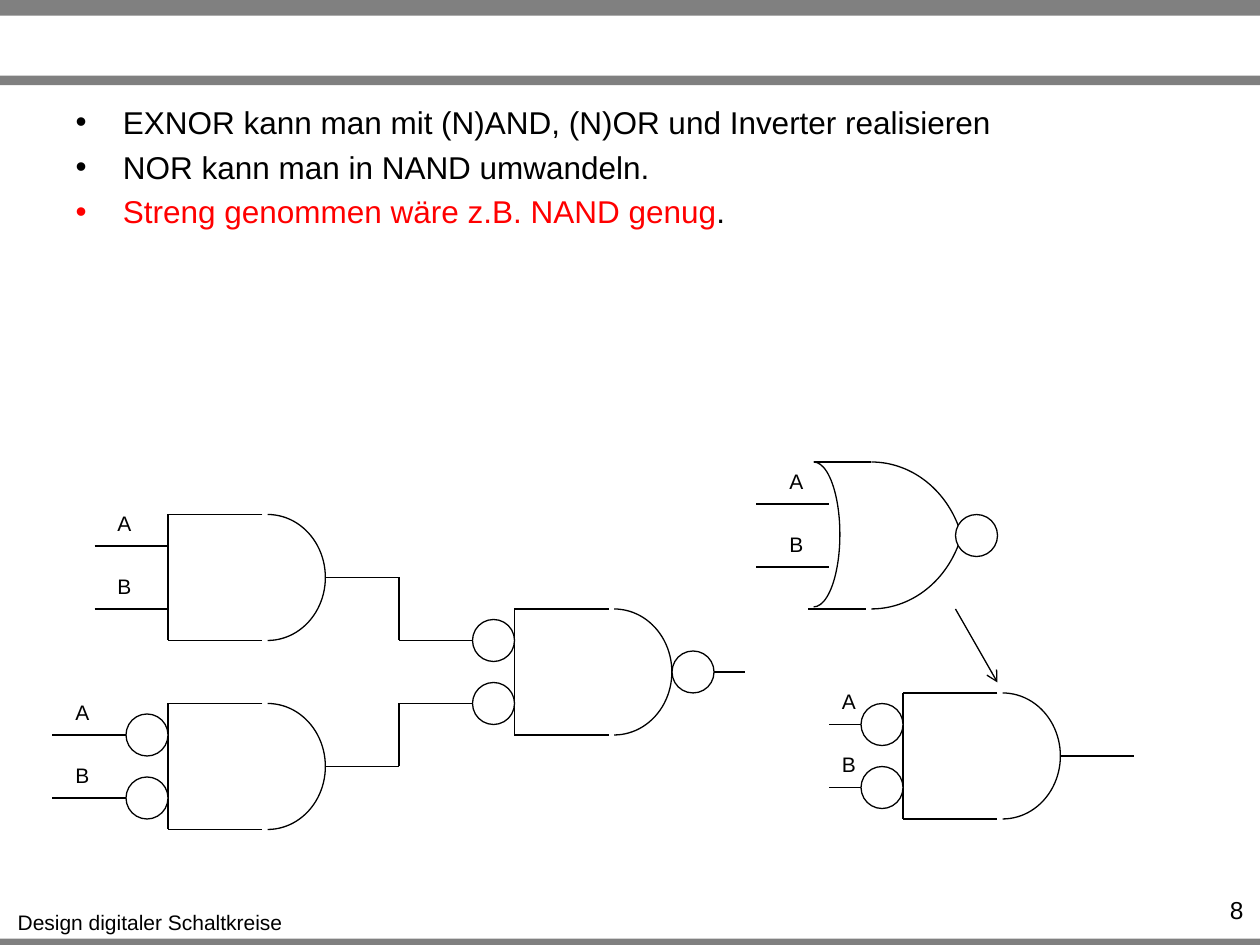
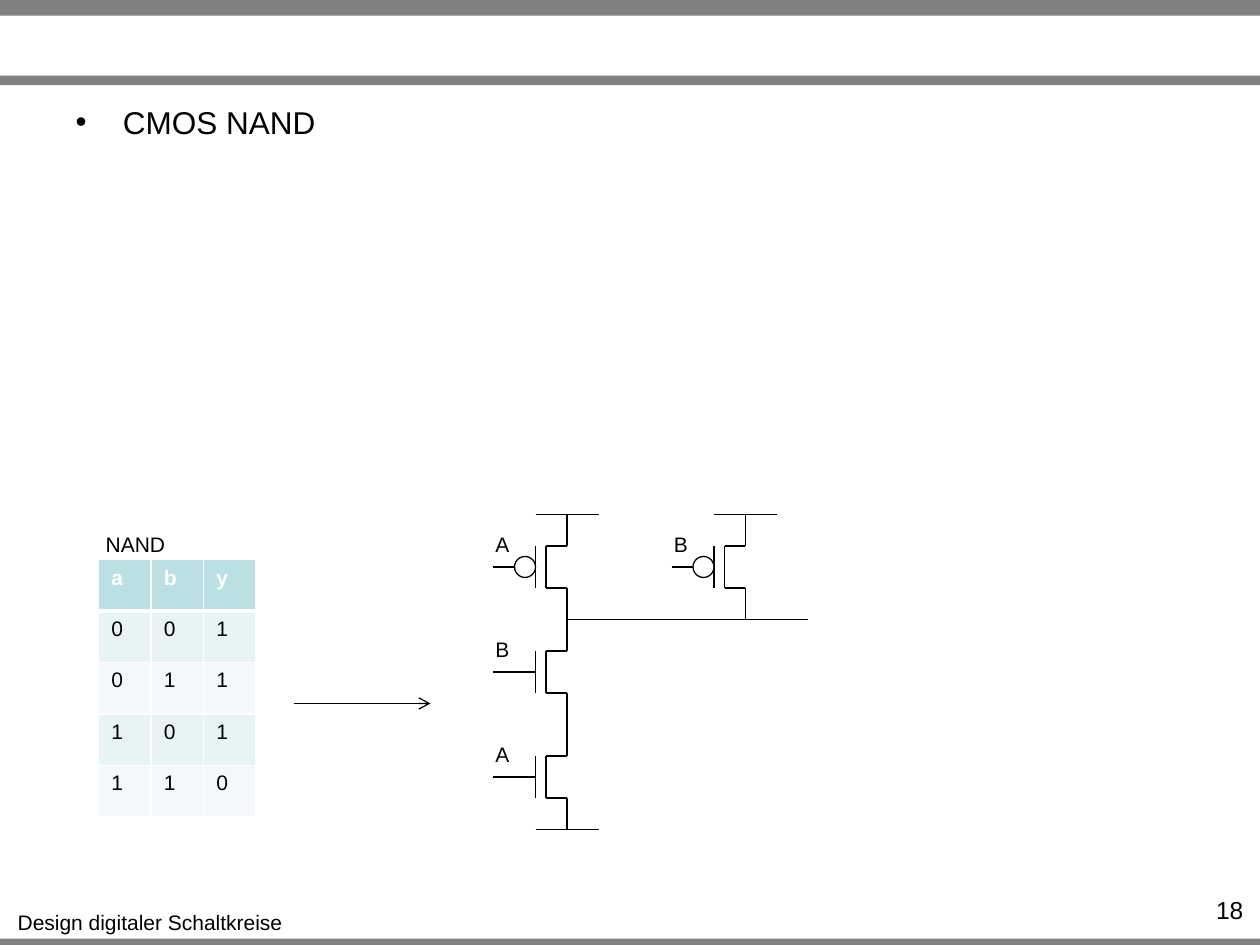
from lxml import etree
from pptx import Presentation
from pptx import util as u
from pptx.dml.color import RGBColor
from pptx.enum import shapes as kinds
from pptx.enum import text
from pptx.oxml.ns import qn

PX = 7620
WIDTH, HEIGHT = 1200, 900
FONT = "Arial"
BLACK, WHITE, GREY, RED = "000000", "FFFFFF", "808080", "FF0000"
HEADER_FILL, ROW_FILLS = "BBE0E3", ("E7F3F4", "F3F9FA")
FOOTER = "Design digitaler Schaltkreise"
BANDS = ((0, 15), (72, 9), (894, 6))
BUBBLE = 40
LABEL_RISE = 40


def color(value):
    return RGBColor.from_string(value)


def px(*lengths):
    return [u.Emu(length * PX) for length in lengths]


def add_run(paragraph, words, size, ink=BLACK, bold=False):
    run = paragraph.add_run()
    run.text = words
    run.font.name = FONT
    run.font.size = u.Pt(size)
    run.font.bold = bold
    run.font.color.rgb = color(ink)


def add_text(shapes, box, words, size=12, align=text.PP_ALIGN.CENTER):
    frame = shapes.add_textbox(*px(*box)).text_frame
    frame.word_wrap = align == text.PP_ALIGN.RIGHT
    paragraph = frame.paragraphs[0]
    paragraph.alignment = align
    add_run(paragraph, words, size)


def add_label(shapes, left, top, letter):
    add_text(shapes, (left, top, 37, 36), letter)


def add_line(shapes, x1, y1, x2, y2, arrow=False):
    connector = shapes.add_connector(kinds.MSO_CONNECTOR.STRAIGHT, *px(x1, y1, x2, y2))
    connector.line.color.rgb = color(BLACK)
    connector.line.width = u.Pt(0.75)
    if arrow:
        etree.SubElement(connector.line._get_or_add_ln(), qn("a:tailEnd"), type="arrow")
    etree.SubElement(connector._element.spPr, qn("a:effectLst"))


def add_path(shapes, *points):
    for start, end in zip(points, points[1:]):
        add_line(shapes, *start, *end)


def add_outline(shapes, kind, box):
    shape = shapes.add_shape(kind, *px(*box))
    shape.shadow.inherit = False
    shape.line.color.rgb = color(BLACK)
    shape.line.width = u.Pt(0.75)
    return shape


def add_arc(shapes, box, start, end):
    arc = add_outline(shapes, kinds.MSO_SHAPE.ARC, box)
    arc.fill.background()
    arc.adjustments[0] = start * 0.6
    arc.adjustments[1] = end * 0.6


def add_bubble(shapes, left, middle, size=BUBBLE):
    box = (left, middle - size // 2, size, size)
    bubble = add_outline(shapes, kinds.MSO_SHAPE.OVAL, box)
    bubble.fill.solid()
    bubble.fill.fore_color.rgb = color(WHITE)


def add_base_slide(presentation, number, bullets):
    slide = presentation.slides.add_slide(presentation.slide_layouts[1])
    title = slide.shapes.title.element
    title.getparent().remove(title)
    for top, height in BANDS:
        band = slide.shapes.add_shape(kinds.MSO_SHAPE.RECTANGLE, *px(0, top, WIDTH, height))
        band.shadow.inherit = False
        band.fill.solid()
        band.fill.fore_color.rgb = color(GREY)
        band.line.fill.background()
    add_text(slide.shapes, (4, 860, 278, 36), FOOTER)
    add_text(slide.shapes, (1092, 847, 104, 29), str(number), 14, text.PP_ALIGN.RIGHT)
    add_bullets(slide.placeholders[1], (60, 92, 1080, 190), bullets)
    return slide


def add_bullets(body, box, bullets):
    body.left, body.top, body.width, body.height = px(*box)
    frame = body.text_frame
    frame.auto_size = text.MSO_AUTO_SIZE.NONE
    for index, runs in enumerate(bullets):
        paragraph = frame.add_paragraph() if index else frame.paragraphs[0]
        paragraph.space_before = u.Pt(4 if index else 0)
        for words, ink in runs:
            add_run(paragraph, words, 18, ink)


def add_and_gate(shapes, left, top, lead=70, labels="", label_shift=10,
                 inverted_inputs=False, inverted_output=False):
    right, bottom, middle = left + 150, top + 120, top + 60
    add_path(shapes, (left + 90, top), (left, top), (left, bottom), (left + 90, bottom))
    add_arc(shapes, (left + 40, top, 110, 120), 270, 90)
    add_line(shapes, right, middle, right + 70, middle)
    for height in (top + 30, top + 90):
        add_line(shapes, left - lead, height, left, height)
        if inverted_inputs:
            add_bubble(shapes, left - BUBBLE, height)
    for index, letter in enumerate(labels):
        add_label(shapes, left - lead + label_shift, top + 30 + 60 * index - LABEL_RISE, letter)
    if inverted_output:
        add_bubble(shapes, right, middle)


def add_nor_gate(shapes, left, top):
    for index, letter in enumerate("AB"):
        height = top + 40 + 60 * index
        add_line(shapes, left, height, left + 70, height)
        add_label(shapes, left + 20, height - LABEL_RISE, letter)
    add_arc(shapes, (left + 30, top, 50, 138), 270, 90)
    add_arc(shapes, (left + 20, top, 180, 200), 270, 336)
    add_arc(shapes, (left + 20, top - 60, 180, 200), 24, 90)
    add_line(shapes, left + 55, top, left + 110, top)
    add_line(shapes, left + 50, top + 140, left + 105, top + 140)
    add_bubble(shapes, left + 190, top + 70)


def add_transistor(shapes, left, top, letter, p_type=False):
    channel, drain, middle = left + 50, left + 70, top + 50
    add_path(shapes, (drain, top), (drain, top + 30), (channel, top + 30),
             (channel, top + 70), (drain, top + 70), (drain, top + 100))
    add_line(shapes, left + 40, top + 30, left + 40, top + 70)
    add_line(shapes, left, middle, left + 40, middle)
    if p_type:
        add_bubble(shapes, left + 20, middle, 20)
    add_label(shapes, left - 10, top + 10, letter)


def add_rail(shapes, middle, top):
    add_line(shapes, middle - 30, top, middle + 30, top)


def set_borders(cell, bottom_width):
    properties = cell._tc.get_or_add_tcPr()
    for index, side in enumerate("LRTB"):
        width = bottom_width if side == "B" else 1
        border = etree.Element(qn(f"a:ln{side}"), w=str(u.Pt(width)))
        fill = etree.SubElement(border, qn("a:solidFill"))
        etree.SubElement(fill, qn("a:srgbClr"), val=WHITE)
        properties.insert(index, border)


def add_truth_table(shapes, left, top, rows):
    count, columns = len(rows), len(rows[0])
    table = shapes.add_table(count, columns, *px(left, top, 50 * columns, 49 * count)).table
    for row_index, values in enumerate(rows):
        header = row_index == 0
        for column_index, value in enumerate(values):
            cell = table.cell(row_index, column_index)
            cell.fill.solid()
            fill = HEADER_FILL if header else ROW_FILLS[(row_index - 1) % 2]
            cell.fill.fore_color.rgb = color(fill)
            set_borders(cell, 3 if header else 1)
            paragraph = cell.text_frame.paragraphs[0]
            add_run(paragraph, value, 12, WHITE if header else BLACK, header)


def add_gates_slide(presentation):
    shapes = add_base_slide(presentation, 8, [
        [("EXNOR kann man mit (N)AND, (N)OR und Inverter realisieren", BLACK)],
        [("NOR kann man in NAND umwandeln.", BLACK)],
        [("Streng genommen wäre z.B. NAND genug", RED), (".", BLACK)],
    ]).shapes
    add_and_gate(shapes, 160, 490, labels="AB")
    add_and_gate(shapes, 160, 670, lead=110, labels="AB", inverted_inputs=True)
    add_path(shapes, (380, 550), (380, 610), (420, 610))
    add_path(shapes, (380, 730), (380, 670), (420, 670))
    add_and_gate(shapes, 490, 580, inverted_inputs=True, inverted_output=True)
    add_nor_gate(shapes.add_group_shape().shapes, 720, 440)
    add_line(shapes, 910, 580, 950, 650, arrow=True)
    add_and_gate(shapes, 860, 660, labels="AB", label_shift=0, inverted_inputs=True)


def add_cmos_slide(presentation):
    shapes = add_base_slide(presentation, 18, [[("CMOS NAND", BLACK)]]).shapes
    add_text(shapes, (88, 500, 82, 36), "NAND")
    add_truth_table(shapes, 94, 533, ["aby", "001", "011", "101", "110"])
    add_line(shapes, 280, 670, 410, 670, arrow=True)
    for left, top, letter, p_type in ((470, 490, "A", True), (640, 490, "B", True),
                                      (470, 590, "B", False), (470, 690, "A", False)):
        add_transistor(shapes.add_group_shape().shapes, left, top, letter, p_type)
    for middle, top in ((540, 490), (710, 490), (540, 790)):
        add_rail(shapes, middle, top)
    add_line(shapes, 540, 590, 770, 590)


def main():
    presentation = Presentation()
    presentation.slide_width, presentation.slide_height = px(WIDTH, HEIGHT)
    add_gates_slide(presentation)
    add_cmos_slide(presentation)
    presentation.save("out.pptx")


if __name__ == "__main__":
    main()
